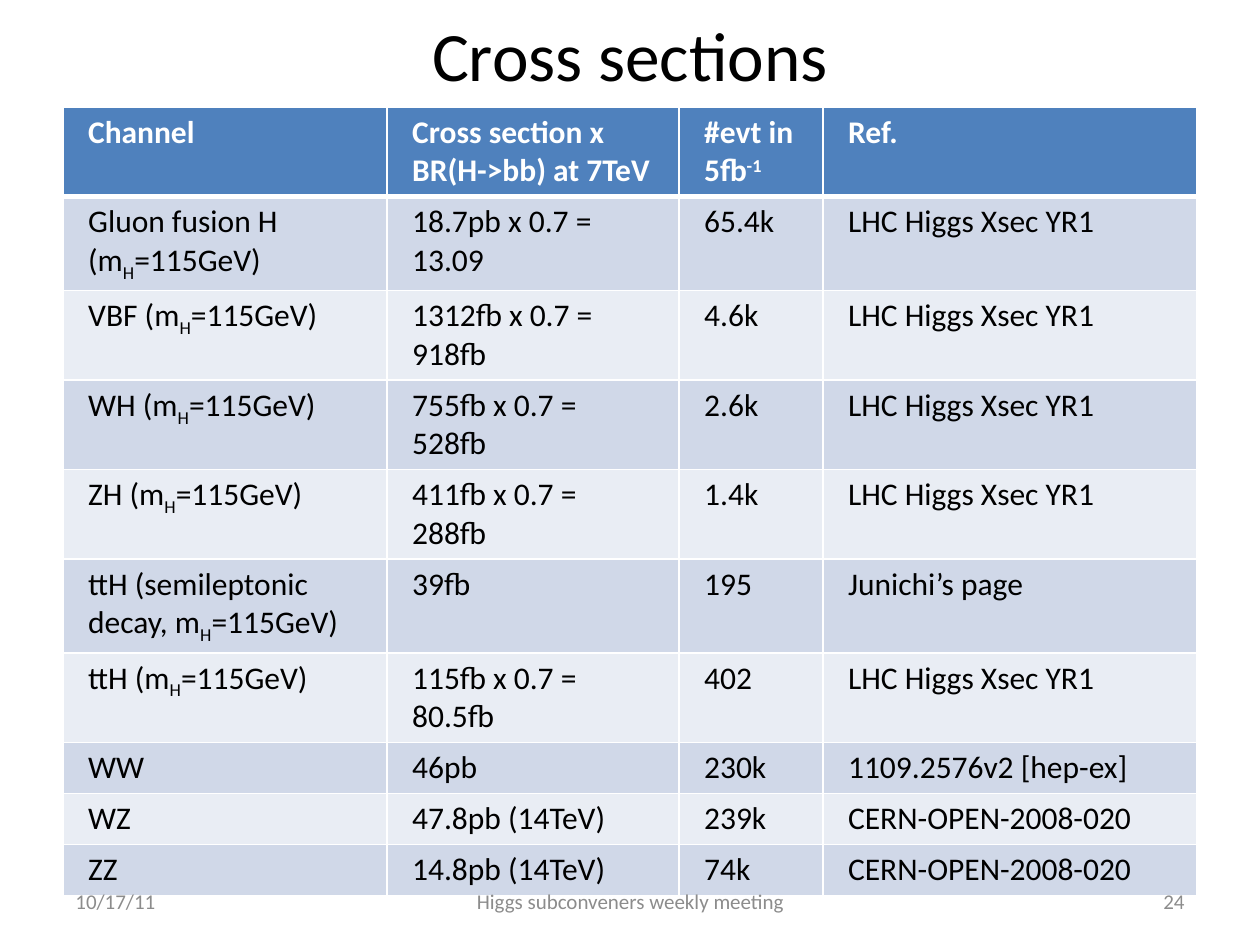
import pptx
import pptx.util
import pptx.dml.color
import pptx.enum.text
import pptx.oxml
import pptx.oxml.ns

EMU_PER_PX = 914400 // 126
BLACK = pptx.dml.color.RGBColor(0x00, 0x00, 0x00)
WHITE = pptx.dml.color.RGBColor(0xFF, 0xFF, 0xFF)
GREY = pptx.dml.color.RGBColor(0x8C, 0x8C, 0x8C)
HEADER_BLUE = pptx.dml.color.RGBColor(0x4F, 0x81, 0xBD)
BAND_DARK = pptx.dml.color.RGBColor(0xD0, 0xD8, 0xE8)
BAND_LIGHT = pptx.dml.color.RGBColor(0xE9, 0xED, 0xF4)
LEFT = pptx.enum.text.PP_ALIGN.LEFT
CENTER = pptx.enum.text.PP_ALIGN.CENTER
RIGHT = pptx.enum.text.PP_ALIGN.RIGHT
MIDDLE = pptx.enum.text.MSO_ANCHOR.MIDDLE

# Text between bars is raised in the header and lowered in the body
MASS = "m|H|=115GeV)"
YELLOW_REPORT = "LHC Higgs Xsec YR1"
CERN_NOTE = "CERN-OPEN-2008-020"
ROWS = [
    ("Channel", "Cross section x BR(H->bb) at 7TeV", "#evt in 5fb|-1", "Ref."),
    ("Gluon fusion H (" + MASS, "18.7pb x 0.7 = 13.09", "65.4k", YELLOW_REPORT),
    ("VBF (" + MASS, "1312fb x 0.7 = 918fb", "4.6k", YELLOW_REPORT),
    ("WH (" + MASS, "755fb x 0.7 = 528fb", "2.6k", YELLOW_REPORT),
    ("ZH (" + MASS, "411fb x 0.7 = 288fb", "1.4k", YELLOW_REPORT),
    ("ttH (semileptonic decay, " + MASS, "39fb", "195", "Junichi’s page"),
    ("ttH (" + MASS, "115fb x 0.7 = 80.5fb", "402", YELLOW_REPORT),
    ("WW", "46pb", "230k", "1109.2576v2 [hep-ex]"),
    ("WZ", "47.8pb (14TeV)", "239k", CERN_NOTE),
    ("ZZ", "14.8pb (14TeV)", "74k", CERN_NOTE),
]
COLUMN_WIDTHS = (324, 292, 144, 374)
ROW_HEIGHT = 51


def px(n):
    return pptx.util.Emu(n * EMU_PER_PX)


class SlideWriter:
    font = "Calibri"

    def __init__(self, prs):
        self.slide = prs.slides.add_slide(prs.slide_layouts[5])

    def style(self, p, size, color, align=LEFT, bold=False):
        p.alignment = align
        p.font.name = self.font
        p.font.size = pptx.util.Pt(size)
        p.font.bold = bold
        p.font.color.rgb = color

    def title(self, text, x, y, w, h):
        sp = self.slide.shapes.title
        sp.left, sp.top, sp.width, sp.height = map(px, (x, y, w, h))
        tf = sp.text_frame
        tf.text = text
        tf.vertical_anchor = MIDDLE
        self.style(tf.paragraphs[0], 39.6, BLACK, CENTER)

    def footer(self, text, x, w, align):
        sp = self.slide.shapes.add_textbox(px(x), px(876), px(w), px(50))
        tf = sp.text_frame
        tf.word_wrap = True
        tf.vertical_anchor = MIDDLE
        tf.text = text
        self.style(tf.paragraphs[0], 12, GREY, align)

    def borders(self, cell, bottom):
        tc_pr = cell._tc.get_or_add_tcPr()
        for side, points in (("L", 1), ("R", 1), ("T", 1), ("B", bottom)):
            tc_pr.append(pptx.oxml.parse_xml(
                f'<a:ln{side} {pptx.oxml.ns.nsdecls("a")} w="{points * 12700}">'
                f'<a:solidFill><a:srgbClr val="{WHITE}"/></a:solidFill></a:ln{side}>'))

    def cell(self, cell, text, is_header, fill):
        cell.margin_left = cell.margin_right = pptx.util.Inches(0.2)
        cell.margin_top = cell.margin_bottom = pptx.util.Inches(0.05)
        self.borders(cell, 3 if is_header else 1)
        cell.fill.solid()
        cell.fill.fore_color.rgb = fill
        p = cell.text_frame.paragraphs[0]
        self.style(p, 18, WHITE if is_header else BLACK, bold=is_header)
        for i, part in enumerate(text.split("|")):
            r = p.add_run()
            r.text = part
            if i == 1:
                baseline = "30000" if is_header else "-25000"
                r._r.get_or_add_rPr().set("baseline", baseline)

    def table(self, rows, x, y):
        table = self.slide.shapes.add_table(
            len(rows), len(COLUMN_WIDTHS), px(x), px(y),
            px(sum(COLUMN_WIDTHS)), px(ROW_HEIGHT * len(rows))).table
        for column, width in zip(table.columns, COLUMN_WIDTHS):
            column.width = px(width)
        for i, row in enumerate(rows):
            table.rows[i].height = px(ROW_HEIGHT)
            band = BAND_DARK if i % 2 else BAND_LIGHT
            for j, text in enumerate(row):
                self.cell(table.cell(i, j), text, i == 0, band if i else HEADER_BLUE)


def main():
    prs = pptx.Presentation()
    prs.slide_width = pptx.util.Inches(10)
    prs.slide_height = pptx.util.Inches(7.5)
    s = SlideWriter(prs)

    # Title and table
    s.title("Cross sections", 63, 1, 1134, 105)
    s.table(ROWS, 63, 107)

    # Footer line
    s.footer("10/17/11", 63, 294, LEFT)
    s.footer("24", 903, 294, RIGHT)
    s.footer("Higgs subconveners weekly meeting", 431, 399, CENTER)

    prs.save("out.pptx")


if __name__ == "__main__":
    main()
